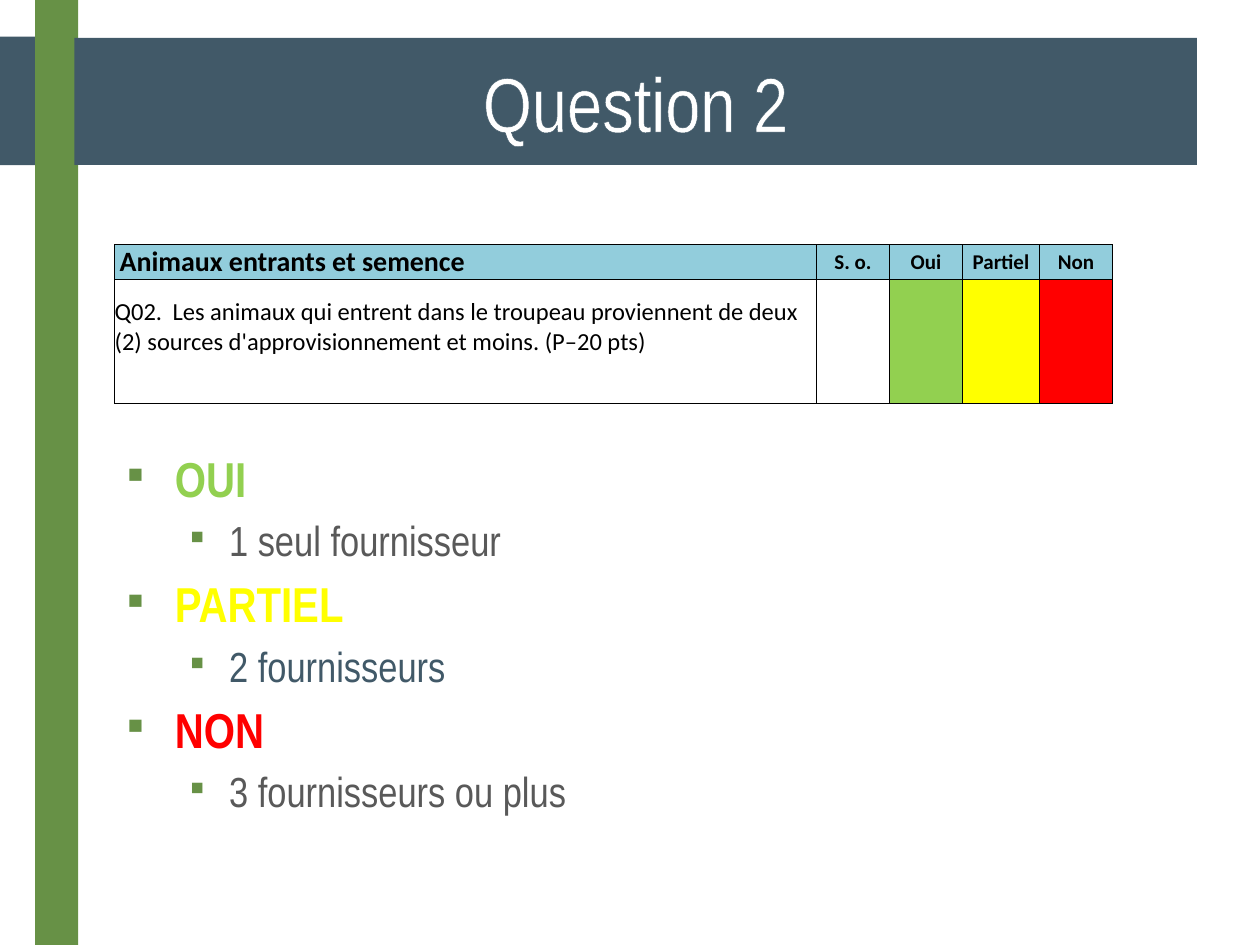
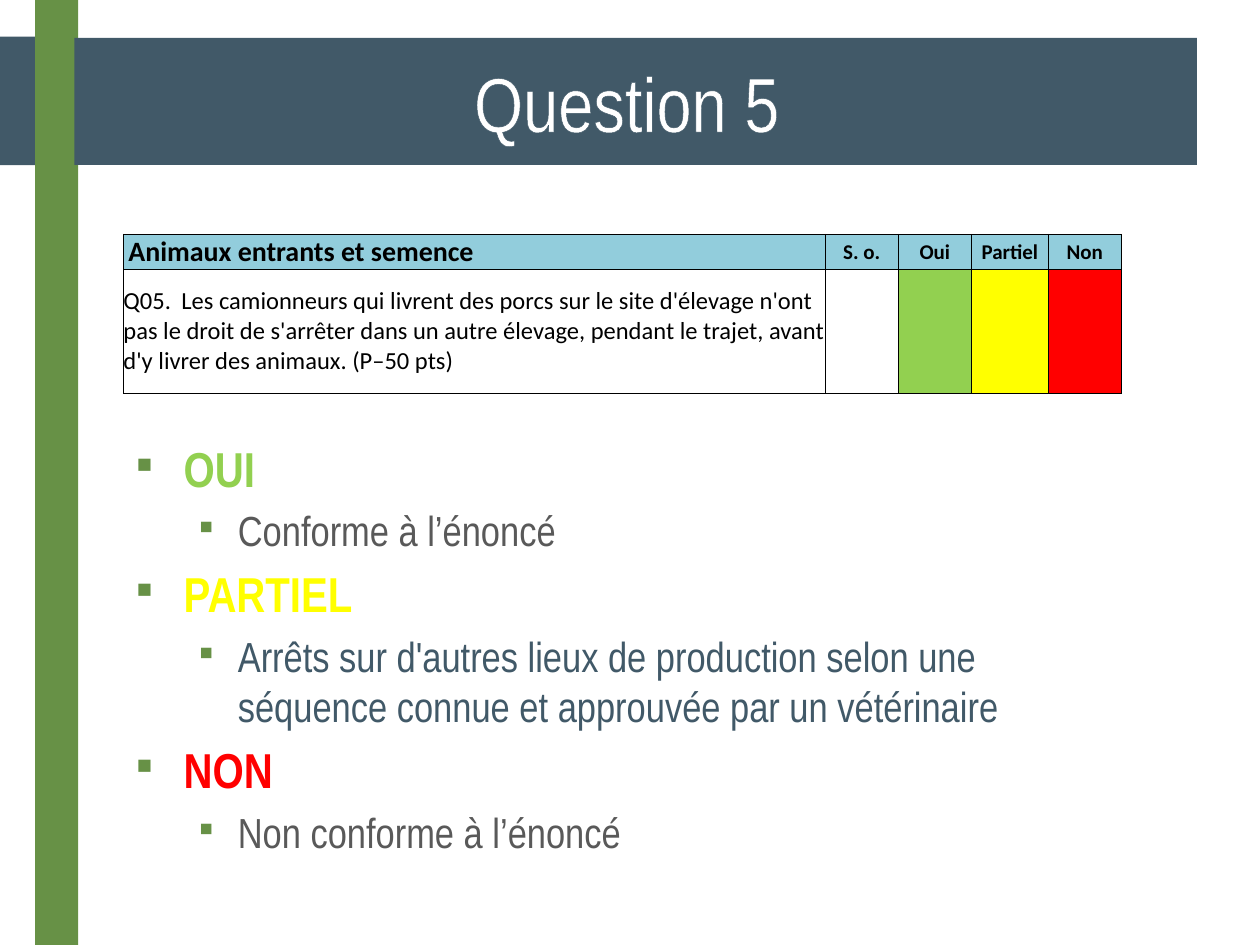
from lxml import etree
from pptx import Presentation
from pptx.dml.color import RGBColor
from pptx.enum.shapes import MSO_SHAPE
from pptx.enum.text import MSO_ANCHOR, MSO_AUTO_SIZE, PP_ALIGN
from pptx.oxml.ns import qn
from pptx.util import Inches, Pt

RECT = MSO_SHAPE.RECTANGLE
MIDDLE = MSO_ANCHOR.MIDDLE
LEFT, CENTER = PP_ALIGN.LEFT, PP_ALIGN.CENTER
FIXED = MSO_AUTO_SIZE.NONE

# Content: pad is the extra title inset on the right, foot the inset under the question
HEAD = ["Animaux entrants et semence", "S. o.", "Oui", "Partiel", "Non"]
SLIDES = [
    {"title": "Question 2", "pad": 0, "left": 0.91, "top": 1.94, "foot": 0.23,
     "code": "Q02.",
     "ask": "Les animaux qui entrent dans le troupeau proviennent de deux (2) "
            "sources d'approvisionnement et moins. (P–20 pts)",
     "rules": ["1 seul fournisseur", "2 fournisseurs", "3 fournisseurs ou plus"]},
    {"title": "Question 5", "pad": 0.14, "left": 0.98, "top": 1.86, "foot": 0,
     "code": "Q05.",
     "ask": "Les camionneurs qui livrent des porcs sur le site d'élevage n'ont pas "
            "le droit de s'arrêter dans un autre élevage, pendant le trajet, avant "
            "d'y livrer des animaux. (P–50 pts)",
     "rules": ["Conforme à l’énoncé",
               "Arrêts sur d'autres lieux de production selon une séquence connue "
               "et approuvée par un vétérinaire",
               "Non conforme à l’énoncé"]},
]

# Shared style
HEX = {"slate": "415968", "moss": "679146", "white": "FFFFFF", "black": "000000",
       "sky": "92CDDC", "yes": "92D050", "part": "FFFF00", "no": "FF0000",
       "gray": "595959"}
BANDS = [(0, 0.29, 0.56, 1.02, "slate"), (0.28, 0, 0.34, 7.5, "moss")]
COLS = [5.57, 0.58, 0.58, 0.61, 0.58]
ROWS = [0.28, 0.98]
MARKS = [None, None, "yes", "part", "no"]
GRADES = [("OUI", "yes", "gray"), ("PARTIEL", "part", "slate"), ("NON", "no", "gray")]
INDENTS = [(0.38, 0.38, 28), (0.81, 0.31, 24)]  # margin, hang, size
RIGHT = 8.55
DROP = 1.57


def rgb(name):
    return RGBColor.from_string(HEX[name])


def add(parent, tag, **attrs):
    node = etree.SubElement(parent, qn(tag))
    for key, val in attrs.items():
        node.set(key, str(val))
    return node


def line(parent, tag, width, color):
    node = add(parent, tag, w=Pt(width))
    add(add(node, "a:solidFill"), "a:srgbClr", val=HEX[color])
    return node


def style(para, face, size, color, bold=False, align=LEFT):
    para.alignment = align
    font = para.font
    font.name, font.size, font.bold = face, Pt(size), bold
    font.color.rgb = rgb(color)


def add_bands(slide):
    for x, y, w, h, color in BANDS:
        band = slide.shapes.add_shape(RECT, *map(Inches, (x, y, w, h)))
        band.shadow.inherit = False
        band.fill.solid()
        band.fill.fore_color.rgb = rgb(color)
        band.line.fill.background()


def set_title(slide, text, pad):
    title = slide.shapes.title
    title.left, title.top, title.width, title.height = map(Inches, (0.59, 0.3, 8.91, 1.01))
    title.fill.solid()
    title.fill.fore_color.rgb = rgb("slate")
    frame = title.text_frame
    frame.text = text
    frame.auto_size = FIXED
    frame.vertical_anchor = MIDDLE
    frame.margin_right = Inches(0.1 + pad)
    para = frame.paragraphs[0]
    style(para, "Arial Narrow", 44, "white", align=CENTER)
    # Thin outline around the letters
    props = para.runs[0]._r.get_or_add_rPr()
    props.insert(0, line(props, "a:ln", 0.75, "slate"))
    # Title lies over the bands
    slide.shapes._spTree.append(title._element)


def set_cell(cell, fill):
    cell.margin_left = cell.margin_right = cell.margin_top = cell.margin_bottom = 0
    cell.vertical_anchor = MIDDLE
    if fill:
        cell.fill.solid()
        cell.fill.fore_color.rgb = rgb(fill)
    else:
        cell.fill.background()
    props = cell._tc.get_or_add_tcPr()
    for spot, side in enumerate("LRTB"):
        props.insert(spot, line(props, "a:ln" + side, 0.5, "black"))


def add_grid(slide, item):
    box = map(Inches, (item["left"], item["top"], sum(COLS), sum(ROWS)))
    grid = slide.shapes.add_table(len(ROWS), len(COLS), *box).table
    grid.first_row = grid.horz_banding = False
    for row, high in zip(grid.rows, ROWS):
        row.height = Inches(high)
    for col, wide in enumerate(COLS):
        grid.columns[col].width = Inches(wide)
        head = grid.cell(0, col)
        set_cell(head, "sky")
        head.text = HEAD[col]
        style(head.text_frame.paragraphs[0], "Calibri", 12 if col else 16, "black",
              True, CENTER if col else LEFT)
        set_cell(grid.cell(1, col), MARKS[col])
    grid.cell(0, 0).margin_left = Inches(0.04)

    # Question, with its code set off by a tab
    ask = grid.cell(1, 0)
    ask.margin_bottom = Inches(item["foot"])
    ask.text = item["code"] + "\t" + item["ask"]
    para = ask.text_frame.paragraphs[0]
    tabs = add(para._p.get_or_add_pPr(), "a:tabLst")
    add(tabs, "a:tab", pos=Inches(0.46), algn="l")
    style(para, "Calibri", 14, "black")


def add_rules(slide, item):
    left, top = item["left"], item["top"] + DROP
    box = slide.shapes.add_textbox(*map(Inches, (left, top, RIGHT - left, 3.55)))
    frame = box.text_frame
    frame.word_wrap = True
    lines = []
    for (grade, hue, tone), rule in zip(GRADES, item["rules"]):
        lines += [(0, grade, hue), (1, rule, tone)]
    for spot, (level, text, color) in enumerate(lines):
        para = frame.add_paragraph() if spot else frame.paragraphs[0]
        para.text = text
        para.level = level
        margin, hang, size = INDENTS[level]
        if spot:
            para.space_before = Pt(round(size * 0.18, 1))
        props = para._p.get_or_add_pPr()
        props.set("marL", str(Inches(margin)))
        props.set("indent", str(-Inches(hang)))
        add(add(props, "a:buClr"), "a:srgbClr", val=HEX["moss"])
        add(props, "a:buFont", typeface="Arial Narrow")
        add(props, "a:buChar", char="▪")
        style(para, "Arial Narrow", size, color, level == 0)


def main():
    deck = Presentation()
    deck.slide_width, deck.slide_height = Inches(10), Inches(7.5)
    for item in SLIDES:
        slide = deck.slides.add_slide(deck.slide_layouts[5])
        add_bands(slide)
        set_title(slide, item["title"], item["pad"])
        add_grid(slide, item)
        add_rules(slide, item)
    deck.save("out.pptx")


if __name__ == "__main__":
    main()
